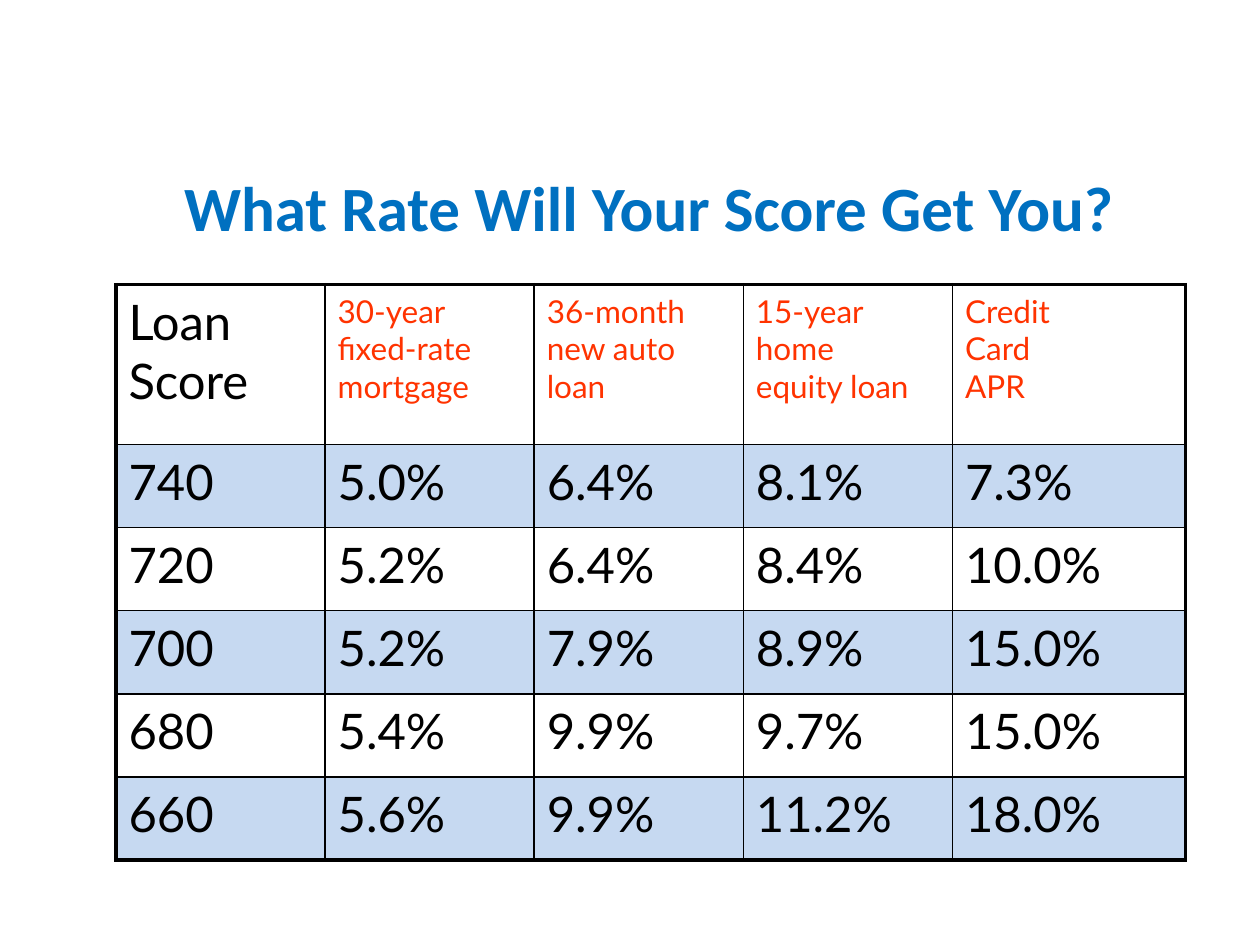
from dataclasses import dataclass

from lxml.etree import SubElement
from pptx import Presentation
from pptx.dml.color import RGBColor as RGB
from pptx.enum.text import MSO_ANCHOR as ANCHOR, PP_ALIGN as ALIGN
from pptx.oxml.ns import qn
from pptx.util import Emu, Inches, Pt


@dataclass(frozen=True)
class Theme:
    """Colours, fonts and type sizes of the slide."""
    title: str = "0070C0"
    text: str = "000000"
    accent: str = "FF3300"
    band: str = "C6D9F1"
    plain: str = "FFFFFF"
    title_font: str = "Calibri"
    table_font: str = "Lato"
    title_size: float = 36
    value_size: float = 28
    label_size: float = 18
    outer: float = 2.25
    inner: float = 1


THEME = Theme()
TITLE = "What Rate Will Your Score Get You?"
RATES = [
    ["Loan\nScore", "30-year\nfixed-rate mortgage", "36-month\nnew auto loan",
     "15-year\nhome\nequity loan", "Credit\nCard\nAPR"],
    ["740", "5.0%", "6.4%", "8.1%", "7.3%"],
    ["720", "5.2%", "6.4%", "8.4%", "10.0%"],
    ["700", "5.2%", "7.9%", "8.9%", "15.0%"],
    ["680", "5.4%", "9.9%", "9.7%", "15.0%"],
    ["660", "5.6%", "9.9%", "11.2%", "18.0%"],
]
COLS = [1.66] * 4 + [1.85]
ROWS = [1.27] + [0.66] * 5


def write(tf, text, *, font, size, color, bold=False, align=ALIGN.LEFT, spacing=None, indent=0):
    """Fill a text frame with one formatted paragraph per line of text."""
    for i, line in enumerate(text.split("\n")):
        p = tf.add_paragraph() if i else tf.paragraphs[0]
        p.alignment = align
        if spacing:
            p.line_spacing = Pt(spacing)
        if indent:
            p._p.get_or_add_pPr().set("marL", str(Inches(indent)))
        r = p.add_run()
        r.text = line
        r.font.name, r.font.size, r.font.bold = font, Pt(size), bold
        r.font.color.rgb = RGB.from_string(color)


def set_margins(box, left, top, right, bottom):
    """Set the inner margins of a cell or text frame in inches."""
    box.margin_left, box.margin_top = Inches(left), Inches(top)
    box.margin_right, box.margin_bottom = Inches(right), Inches(bottom)


def add_title(s, width, height):
    """Move and fill the title placeholder."""
    sp = s.shapes.title
    sp.left, sp.top = Emu(int(width * 0.067)), Emu(int(height * 0.156))
    sp.width, sp.height = Emu(int(width * 0.9)), Emu(int(height * 0.1))
    tf = sp.text_frame
    tf.word_wrap = True
    tf.vertical_anchor = ANCHOR.MIDDLE
    set_margins(tf, 0.1, 0.05, 0.14, 0.05)
    write(tf, TITLE, font=THEME.title_font, size=THEME.title_size, color=THEME.title,
          bold=True, align=ALIGN.CENTER, spacing=57)


def set_borders(cell, outer_sides):
    """Draw four cell borders, heavier on the outer sides."""
    tc_pr = cell._tc.get_or_add_tcPr()
    for side in "LRTB":
        weight = THEME.outer if side in outer_sides else THEME.inner
        ln = SubElement(tc_pr, qn(f"a:ln{side}"), w=str(Pt(weight)))
        fill = SubElement(ln, qn("a:solidFill"))
        SubElement(fill, qn("a:srgbClr"), val=THEME.text)


def format_cell(cell, text, row, col):
    """Write one cell and style it by its place in the grid."""
    edges = {"L": col == 0, "R": col == len(COLS) - 1, "T": row == 0, "B": row == len(ROWS) - 1}
    label = row == 0 and col > 0
    set_margins(cell, 0.06, 0.06, 0.06, 0.06)
    set_borders(cell, [side for side, on_edge in edges.items() if on_edge])
    cell.fill.solid()
    cell.fill.fore_color.rgb = RGB.from_string(THEME.band if row % 2 else THEME.plain)
    write(cell.text_frame, text, font=THEME.table_font, indent=0.04,
          size=THEME.label_size if label else THEME.value_size,
          color=THEME.accent if label else THEME.text)


def add_rates(s, width, height):
    """Add the table of rates by score."""
    table = s.shapes.add_table(
        len(ROWS), len(COLS), Emu(int(width * 0.092)), Emu(int(height * 0.301)),
        Inches(sum(COLS)), Inches(sum(ROWS))).table
    for column, w in zip(table.columns, COLS):
        column.width = Inches(w)
    for i, (line, h) in enumerate(zip(RATES, ROWS)):
        table.rows[i].height = Inches(h)
        for j, text in enumerate(line):
            format_cell(table.cell(i, j), text, i, j)


def main():
    """Build and save the slide."""
    prs = Presentation()
    prs.slide_width, prs.slide_height = Inches(10), Inches(7.5)
    s = prs.slides.add_slide(prs.slide_layouts[5])
    add_title(s, prs.slide_width, prs.slide_height)
    add_rates(s, prs.slide_width, prs.slide_height)
    prs.save("out.pptx")


if __name__ == "__main__":
    main()
